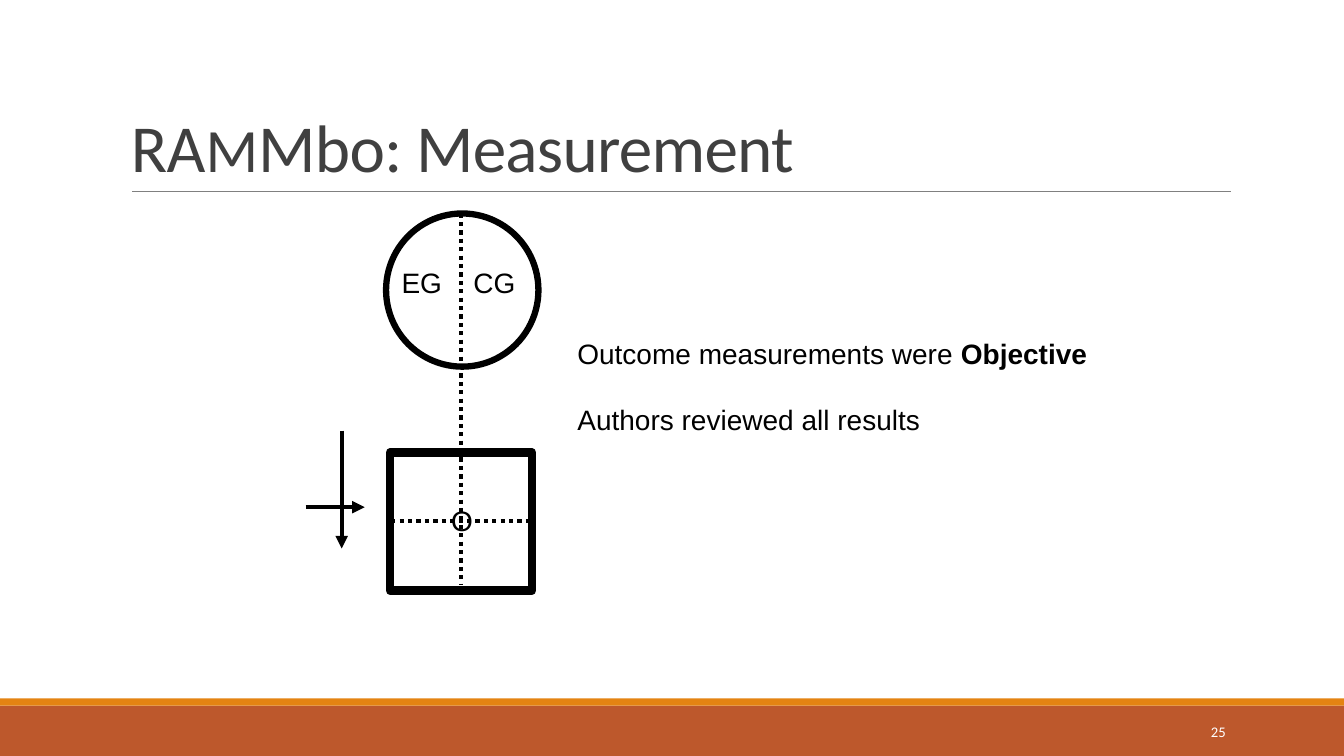
"""Build the RAMMbo measurement slide with its trial diagram."""
from lxml import etree
from pptx import Presentation
from pptx.dml.color import RGBColor
from pptx.enum.dml import MSO_LINE
from pptx.enum.shapes import MSO_CONNECTOR, MSO_SHAPE
from pptx.enum.text import MSO_ANCHOR, PP_ALIGN
from pptx.oxml.ns import qn
from pptx.util import Cm, Pt

STRAIGHT = MSO_CONNECTOR.STRAIGHT
RECTANGLE, OVAL = MSO_SHAPE.RECTANGLE, MSO_SHAPE.OVAL
DOTTED = MSO_LINE.ROUND_DOT
TOP, MIDDLE, BOTTOM = MSO_ANCHOR.TOP, MSO_ANCHOR.MIDDLE, MSO_ANCHOR.BOTTOM
LEFT, RIGHT = PP_ALIGN.LEFT, PP_ALIGN.RIGHT
rgb = RGBColor.from_string


def add_text(box, paragraphs, size=20, font="Arial", color="000000",
             anchor=TOP, align=LEFT, inset=(0.2, 0.1)):
    """Add a text box whose paragraphs are lists of run texts."""
    shape = slide.shapes.add_textbox(*map(Cm, box))
    frame = shape.text_frame
    frame.word_wrap = True
    frame.vertical_anchor = anchor
    frame.margin_left = frame.margin_right = Cm(inset[0])
    frame.margin_top = frame.margin_bottom = Cm(inset[1])
    for index, texts in enumerate(paragraphs):
        paragraph = frame.add_paragraph() if index else frame.paragraphs[0]
        paragraph.alignment = align
        for text in texts:
            paragraph.add_run().text = text
        paragraph.font.size = Pt(size)
        paragraph.font.name = font
        paragraph.font.color.rgb = rgb(color)
    return frame.paragraphs


def add_line(ends, color="000000", width=3, dash=None, arrow=False):
    """Add a straight line, dotted or with an arrowhead on request."""
    connector = slide.shapes.add_connector(STRAIGHT, *map(Cm, ends))
    connector.line.color.rgb = rgb(color)
    connector.line.width = Pt(width)
    if dash:
        connector.line.dash_style = dash
    if arrow:
        etree.SubElement(connector.line._get_or_add_ln(), qn("a:tailEnd"), type="triangle")
    etree.SubElement(connector._element.spPr, qn("a:effectLst"))


presentation = Presentation()
presentation.slide_width, presentation.slide_height = Cm(33.87), Cm(19.05)
slide = presentation.slides.add_slide(presentation.slide_layouts[6])

for top, height, color in [(17.78, 1.27, "BD582C"), (17.6, 0.18, "E48312")]:
    band = slide.shapes.add_shape(RECTANGLE, 0, Cm(top), presentation.slide_width, Cm(height))
    band.shadow.inherit = False
    band.fill.solid()
    band.fill.fore_color.rgb = rgb(color)
    band.line.fill.background()

add_line((3.33, 4.83, 31.01, 4.83), "808080", 0.5)
title = add_text((3.05, 0.79, 27.94, 4.04), [["RA", "M", "Mbo: Measurement"]],
                 48, "Calibri", "404040", BOTTOM, inset=(0.25, 0.13))[0]
title.line_spacing = 0.85
title.runs[1].font.size = Pt(44)
for run in title.runs:
    run.font._element.set("spc", "-50")
add_text((27.51, 17.93, 3.63, 1.02), [["25"]], 10.5, "Calibri", "FFFFFF",
         MIDDLE, RIGHT, (0.25, 0.13))

add_line((8.61, 10.85, 8.61, 13.82), arrow=True)
add_line((7.7, 12.78, 9.19, 12.78), arrow=True)
add_line((11.61, 5.38, 11.61, 14.73), dash=DOTTED)
add_line((9.86, 13.13, 13.36, 13.13), dash=DOTTED)

for kind, box, width in [(RECTANGLE, (9.83, 11.4, 3.58, 3.48), 6),
                         (OVAL, (9.73, 5.38, 3.84, 3.86), 4.5)]:
    outline = slide.shapes.add_shape(kind, *map(Cm, box))
    outline.shadow.inherit = False
    outline.fill.background()
    outline.line.color.rgb = rgb("000000")
    outline.line.width = Pt(width)

for label, left, top in [("EG", 9.92, 6.6), ("CG", 11.73, 6.6), ("O", 11.17, 12.6)]:
    add_text((left, top, 1.7, 1.07), [[label]])

findings = add_text((14.35, 8.38, 13.34, 5.33),
                    [["Outcome measurements were ", "Objective"],
                     ["Authors reviewed all results"]])
findings[0].runs[1].font.bold = True
findings[1].space_before = Pt(23)

presentation.save("out.pptx")
